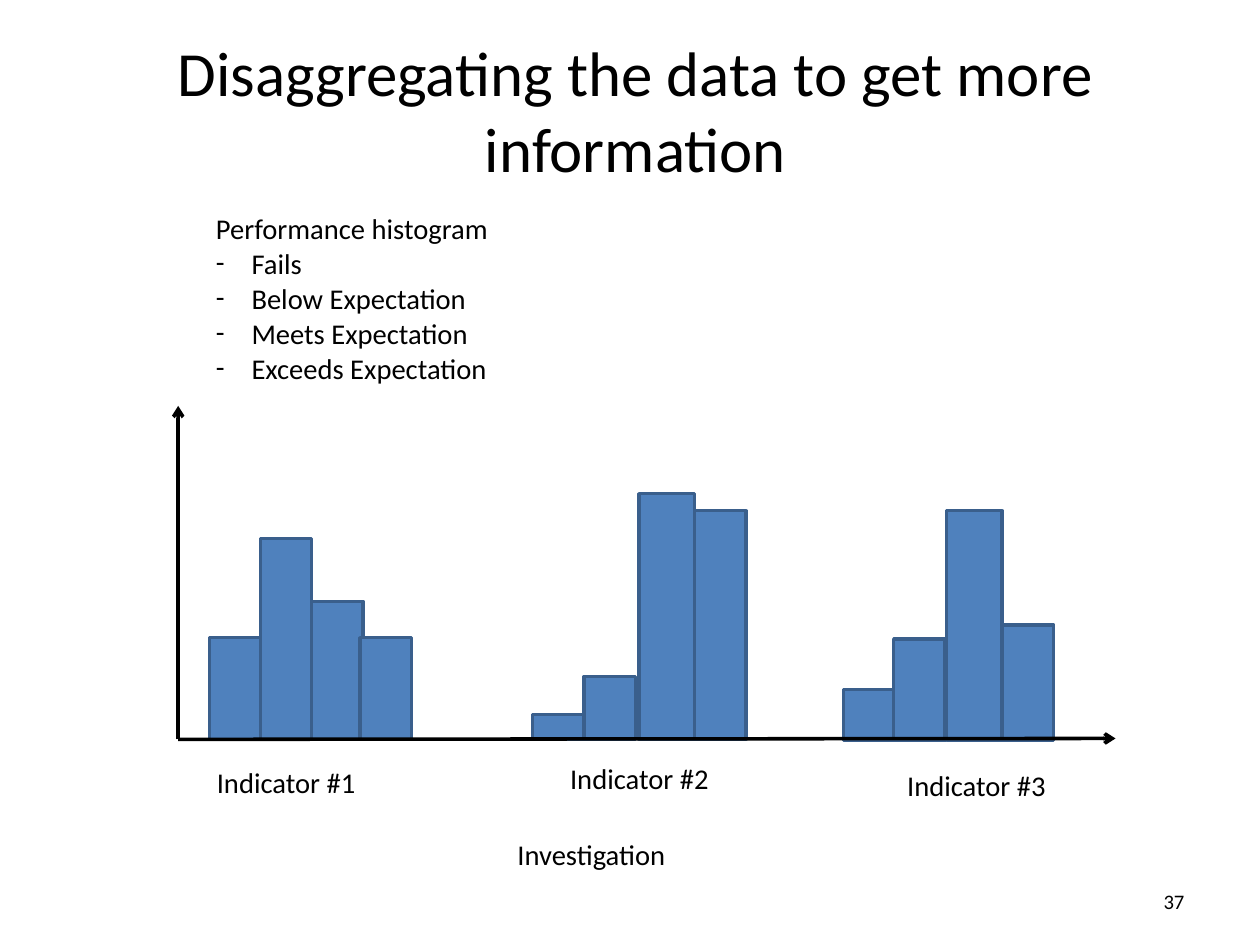
from dataclasses import dataclass

from lxml.etree import SubElement
from pptx import Presentation
from pptx.dml.color import RGBColor
from pptx.enum.shapes import MSO_CONNECTOR, MSO_SHAPE
from pptx.enum.text import MSO_ANCHOR, MSO_AUTO_SIZE, PP_ALIGN
from pptx.oxml.ns import qn
from pptx.util import Cm, Pt


@dataclass(frozen=True)
class Theme:
    font: str = "Calibri"
    text: RGBColor = RGBColor(0x00, 0x00, 0x00)
    bar_fill: RGBColor = RGBColor(0x4F, 0x81, 0xBD)
    bar_line: RGBColor = RGBColor(0x3A, 0x5F, 0x8C)
    title_size: float = 39.6
    body_size: float = 18
    number_size: float = 13
    bar_line_width: float = 2
    axis_width: float = 2.25
    line_spacing: float = 1.02


THEME = Theme()

# Lengths in centimetres
AXIS_LEFT, AXIS_TOP, AXIS_RIGHT = 3.96, 9.02, 24.79
BASELINE = 16.43
BAR_WIDTH, WIDE_BAR_WIDTH = 1.14, 1.24
HANGING_INDENT = 0.79

# Label, label left and top, base of the bars, bars as (left, width, height)
INDICATORS = [
    ("Indicator #1", 4.57, 16.87, BASELINE,
     [(4.65, BAR_WIDTH, 2.26), (5.79, BAR_WIDTH, 4.47),
      (6.93, BAR_WIDTH, 3.07), (8.0, BAR_WIDTH, 2.26)]),
    ("Indicator #2", 12.42, 16.76, BASELINE,
     [(11.84, BAR_WIDTH, 0.56), (12.98, BAR_WIDTH, 1.4),
      (14.2, WIDE_BAR_WIDTH, 5.46), (15.44, BAR_WIDTH, 5.08)]),
    ("Indicator #3", 19.91, 16.92, 16.46,
     [(18.75, BAR_WIDTH, 1.14), (19.86, BAR_WIDTH, 2.26),
      (21.03, WIDE_BAR_WIDTH, 5.11), (22.28, BAR_WIDTH, 2.57)]),
]
PERFORMANCE_LEVELS = ["Fails", "Below Expectation", "Meets Expectation",
                      "Exceeds Expectation"]


def format_runs(paragraph, size):
    for run in paragraph.runs:
        run.font.name = THEME.font
        run.font.size = Pt(size)
        run.font.color.rgb = THEME.text


def format_frame(text_frame, size, alignment):
    """Format a vertically centred frame with the wider margins."""
    text_frame.word_wrap = True
    text_frame.auto_size = MSO_AUTO_SIZE.NONE
    text_frame.vertical_anchor = MSO_ANCHOR.MIDDLE
    text_frame.margin_left = text_frame.margin_right = Cm(0.28)
    text_frame.margin_top = text_frame.margin_bottom = Cm(0.14)
    for paragraph in text_frame.paragraphs:
        paragraph.alignment = alignment
        format_runs(paragraph, size)


def set_title(slide, text):
    title = slide.shapes.title
    title.left, title.top = Cm(1.52), Cm(1.3)
    title.width, title.height = Cm(25.2), Cm(2.26)
    title.text_frame.text = text
    format_frame(title.text_frame, THEME.title_size, PP_ALIGN.CENTER)


def add_text(slide, left, top, width, height, lines):
    shape = slide.shapes.add_textbox(Cm(left), Cm(top), Cm(width), Cm(height))
    text_frame = shape.text_frame
    text_frame.word_wrap = True
    text_frame.auto_size = MSO_AUTO_SIZE.SHAPE_TO_FIT_TEXT
    text_frame.text = "\n".join(lines)
    for paragraph in text_frame.paragraphs:
        paragraph.line_spacing = THEME.line_spacing
        format_runs(paragraph, THEME.body_size)
    return text_frame


def add_dash_bullet(paragraph):
    properties = paragraph._p.get_or_add_pPr()
    properties.set("marL", str(Cm(HANGING_INDENT)))
    properties.set("indent", str(-Cm(HANGING_INDENT)))
    SubElement(properties, qn("a:buFont"), typeface=THEME.font)
    SubElement(properties, qn("a:buChar"), char="-")


def add_slide_number(slide, number):
    shape = slide.shapes.add_textbox(Cm(20.07), Cm(19.46), Cm(6.53), Cm(1.12))
    shape.text_frame.text = number
    format_frame(shape.text_frame, THEME.number_size, PP_ALIGN.RIGHT)


def add_bar(slide, left, width, height, base):
    bar = slide.shapes.add_shape(MSO_SHAPE.RECTANGLE, Cm(left),
                                 Cm(base - height), Cm(width), Cm(height))
    bar.shadow.inherit = False
    bar.fill.solid()
    bar.fill.fore_color.rgb = THEME.bar_fill
    bar.line.color.rgb = THEME.bar_line
    bar.line.width = Pt(THEME.bar_line_width)


def add_axis(slide, end_x, end_y):
    axis = slide.shapes.add_connector(MSO_CONNECTOR.STRAIGHT, Cm(AXIS_LEFT),
                                      Cm(BASELINE), Cm(end_x), Cm(end_y))
    axis.line.color.rgb = THEME.text
    axis.line.width = Pt(THEME.axis_width)
    SubElement(axis.line._get_or_add_ln(), qn("a:tailEnd"), type="arrow")
    SubElement(axis._element.spPr, qn("a:effectLst"))


def main():
    presentation = Presentation()
    presentation.slide_width, presentation.slide_height = Cm(28), Cm(21)
    slide = presentation.slides.add_slide(presentation.slide_layouts[5])
    set_title(slide, "Disaggregating the data to get more information")

    # Legend of the performance levels
    legend = add_text(slide, 4.55, 4.55, 8.43, 4.19,
                      ["Performance histogram", *PERFORMANCE_LEVELS])
    for paragraph in legend.paragraphs[1:]:
        add_dash_bullet(paragraph)

    # Histogram: the horizontal axis lies over the bars
    add_axis(slide, AXIS_LEFT, AXIS_TOP)
    for label, label_left, label_top, base, bars in INDICATORS:
        for left, width, height in bars:
            add_bar(slide, left, width, height, base)
        add_text(slide, label_left, label_top, 3.61, 1.04, [label])
    add_axis(slide, AXIS_RIGHT, BASELINE - 0.02)

    # Axis caption and slide number
    add_text(slide, 11.25, 18.47, 4.6, 1.04, ["Investigation"])
    add_slide_number(slide, "37")

    presentation.save("out.pptx")


if __name__ == "__main__":
    main()
